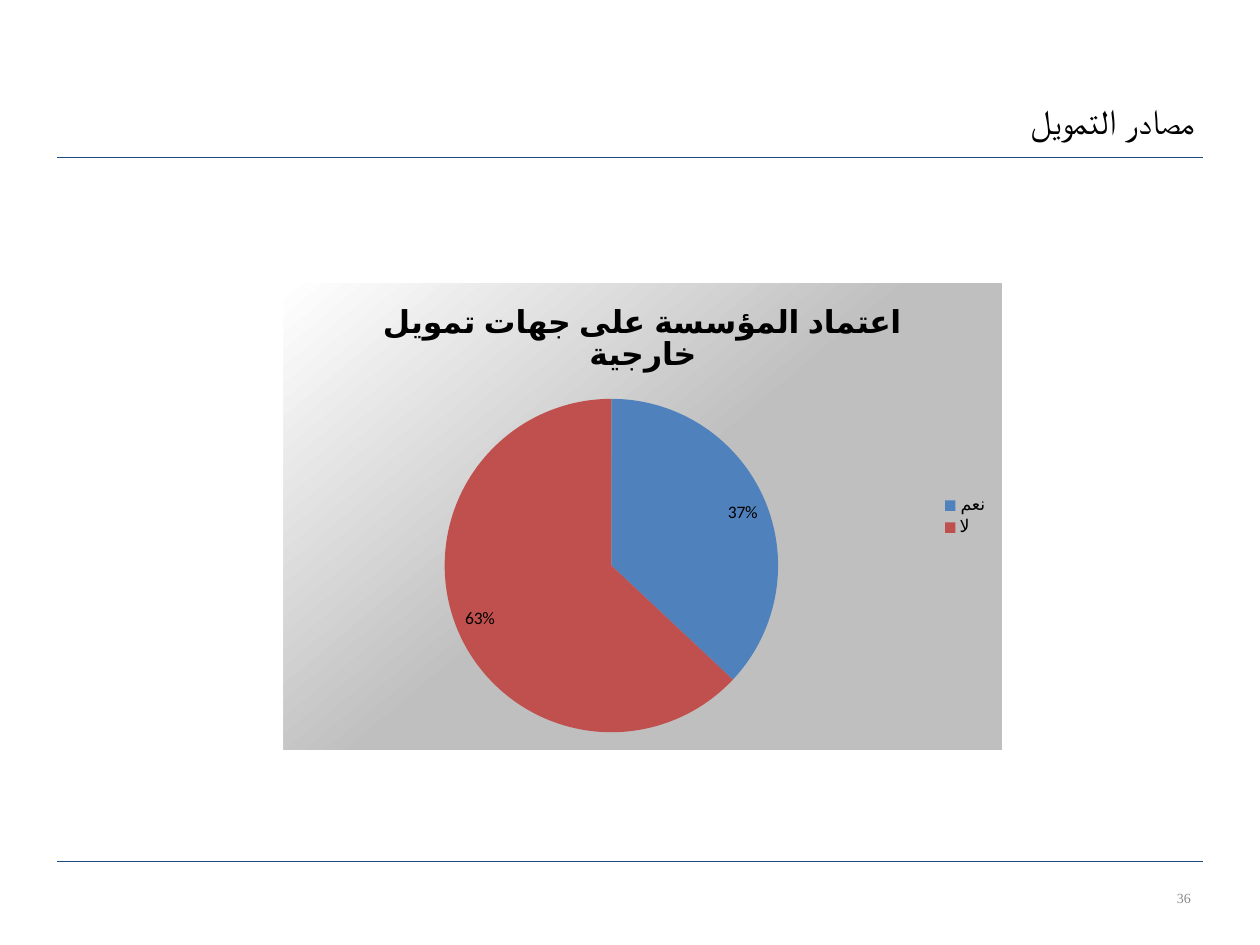
from lxml import etree
from pptx import Presentation
from pptx.chart.data import CategoryChartData as ChartData
from pptx.dml.color import RGBColor
from pptx.enum.chart import XL_CHART_TYPE as ChartType, XL_LABEL_POSITION as LabelPos, XL_LEGEND_POSITION as LegendPos
from pptx.enum.shapes import MSO_CONNECTOR as Connector
from pptx.enum.text import MSO_ANCHOR as Anchor, PP_ALIGN as Align
from pptx.oxml import parse_xml
from pptx.oxml.ns import nsdecls, qn
from pptx.util import Inches, Pt

W, H = 10, 7.5
MARGIN = 0.045 * W
COLORS = {"rule": "1F497D", "text": "000000", "number": "898989",
          "yes": "4F81BD", "no": "C0504D", "light": "FFFFFF", "shade": "BFBFBF"}


def rgb(name):
    """Return a palette colour."""
    return RGBColor.from_string(COLORS[name])


def style_font(font, size, face, color="text", bold=False):
    """Set size, face, colour and weight of a font."""
    font.size, font.name, font.bold = Pt(size), face, bold
    font.color.rgb = rgb(color)


def add_text(s, text, box, size, face, color="text", anchor=Anchor.MIDDLE, rtl=False):
    """Add a right-aligned line of text."""
    tf = s.shapes.add_textbox(*map(Inches, box)).text_frame
    tf.word_wrap, tf.vertical_anchor = True, anchor
    p = tf.paragraphs[0]
    p.alignment = Align.RIGHT
    if rtl:
        p._p.get_or_add_pPr().set("rtl", "1")
    r = p.add_run()
    r.text = text
    style_font(r.font, size, face, color)


def add_rule(s, y):
    """Draw a thin rule between the side margins."""
    ends = map(Inches, (MARGIN, y, W - MARGIN, y))
    line = s.shapes.add_connector(Connector.STRAIGHT, *ends)
    line.line.color.rgb, line.line.width = rgb("rule"), Pt(0.75)
    etree.SubElement(line._element.spPr, qn("a:effectLst"))


def shade_chart(chart, stops, angle):
    """Give the chart area a linear gradient and no outline."""
    gs = "".join(f'<a:gs pos="{pos * 1000}"><a:srgbClr val="{COLORS[name]}"/></a:gs>'
                 for pos, name in stops)
    fill = parse_xml(f'<c:spPr {nsdecls("c", "a")}><a:gradFill><a:gsLst>{gs}</a:gsLst>'
                     f'<a:lin ang="{angle * 60000}" scaled="0"/></a:gradFill>'
                     '<a:ln><a:noFill/></a:ln></c:spPr>')
    chart._chartSpace.find(qn("c:chart")).addnext(fill)


def add_pie(s, title, slices, box):
    """Add a pie chart with percentages, a legend and a title."""
    data = ChartData()
    data.categories = [name for name, _, _ in slices]
    data.add_series("Series 1", [value for _, value, _ in slices])
    chart = s.shapes.add_chart(ChartType.PIE, *map(Inches, box), data).chart
    style_font(chart.font, 10, "Calibri")
    shade_chart(chart, [(0, "light"), (50, "shade")], 50)

    p = chart.chart_title.text_frame.paragraphs[0]
    p._p.get_or_add_pPr().set("rtl", "1")
    r = p.add_run()
    r.text = title
    style_font(r.font, 18, "Calibri", bold=True)
    chart.chart_title.include_in_layout = False

    chart.has_legend = True
    chart.legend.position, chart.legend.include_in_layout = LegendPos.RIGHT, False

    plot = chart.plots[0]
    plot.vary_by_categories = plot.has_data_labels = True
    labels = plot.data_labels
    labels.show_percentage, labels.show_value = True, False
    labels.number_format, labels.number_format_is_linked = "0%", False
    labels.position = LabelPos.INSIDE_END
    for i, (_, _, color) in enumerate(slices):
        fill = plot.series[0].points[i].format.fill
        fill.solid()
        fill.fore_color.rgb = rgb(color)


def main():
    """Build the funding sources slide."""
    prs = Presentation()
    prs.slide_width, prs.slide_height = Inches(W), Inches(H)
    s = prs.slides.add_slide(prs.slide_layouts[6])
    for y in (6.84, 1.25):
        add_rule(s, y)
    add_text(s, "36", (8.64, 6.91, 0.91, 0.44), 8, "Times New Roman", color="number")
    add_text(s, "مصادر التمويل", (2.31, 0.29, 7.27, 0.88), 20, "Roboto",
             anchor=Anchor.BOTTOM, rtl=True)
    add_pie(s, "اعتماد المؤسسة على جهات تمويل خارجية",
            [("نعم", 37, "yes"), ("لا", 63, "no")],
            (0.225 * W, 0.3 * H, 0.57 * W, 3.7))
    prs.save("out.pptx")


if __name__ == "__main__":
    main()
